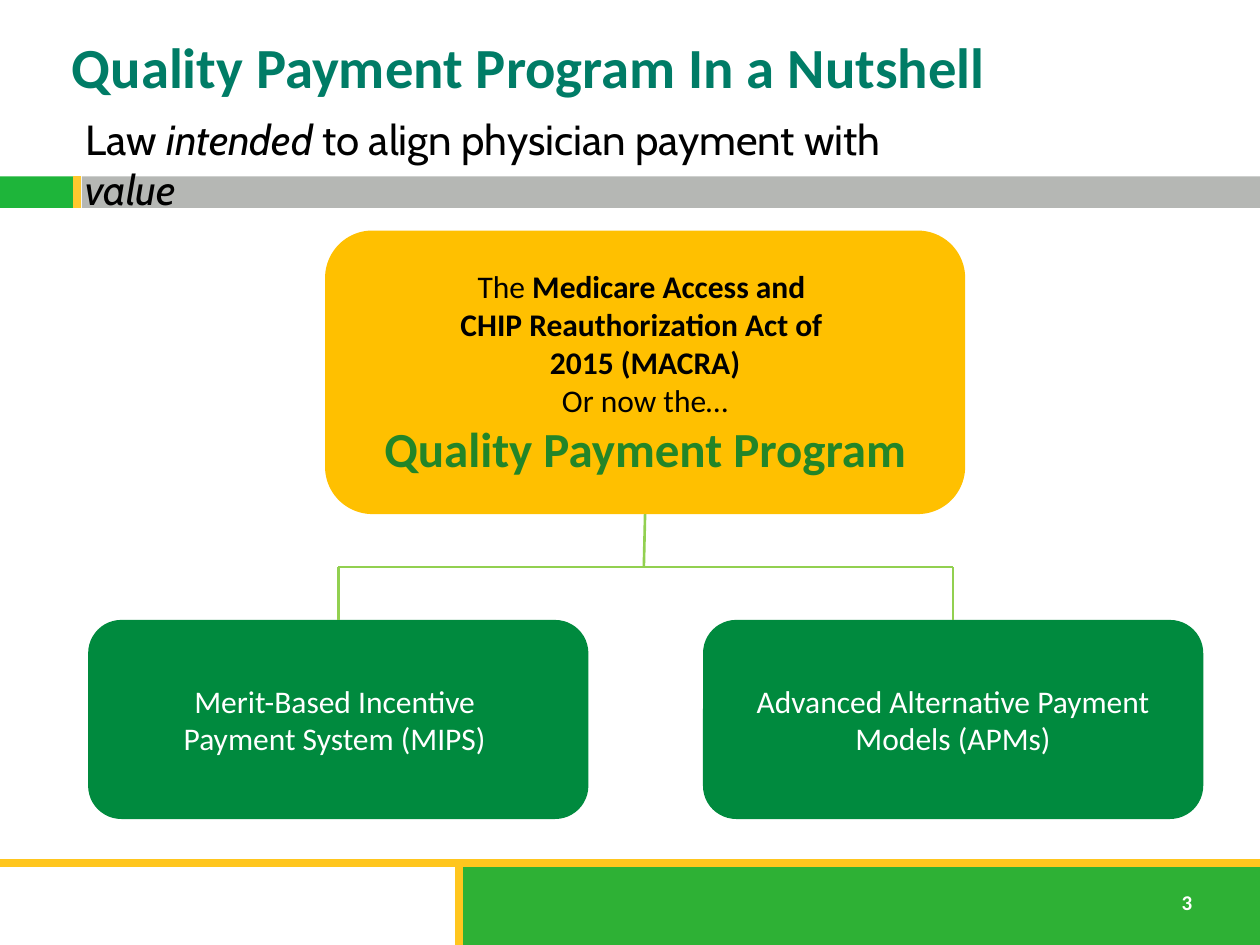
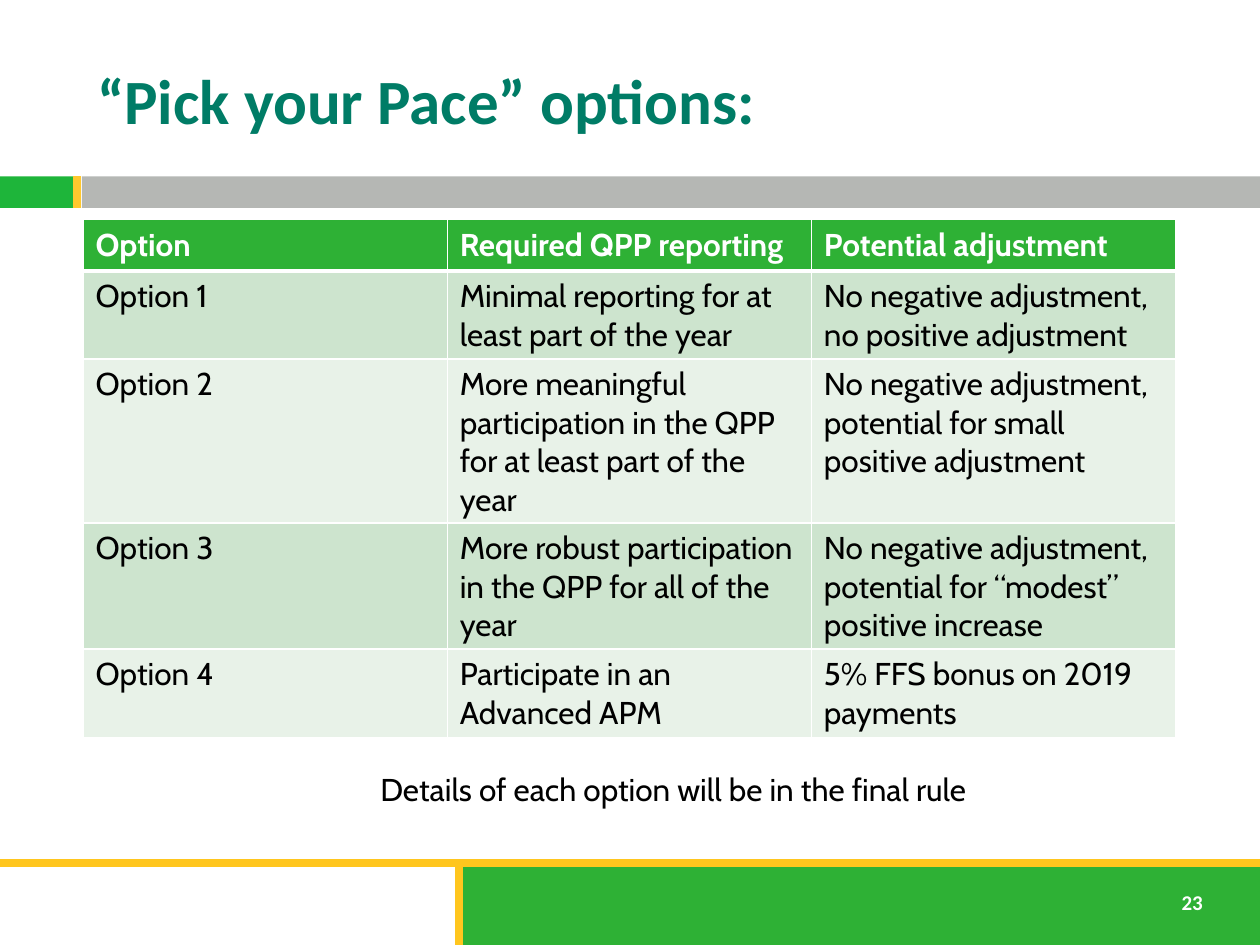
from dataclasses import dataclass

from lxml import etree
from pptx import Presentation
from pptx.dml.color import RGBColor
from pptx.enum.shapes import MSO_CONNECTOR, MSO_SHAPE
from pptx.enum.text import MSO_ANCHOR, MSO_AUTO_SIZE, PP_ALIGN
from pptx.oxml.ns import qn
from pptx.util import Inches, Pt

RECTANGLE = MSO_SHAPE.RECTANGLE
ROUNDED = MSO_SHAPE.ROUNDED_RECTANGLE
STRAIGHT = MSO_CONNECTOR.STRAIGHT
LEFT, CENTER = PP_ALIGN.LEFT, PP_ALIGN.CENTER
TOP, MIDDLE = MSO_ANCHOR.TOP, MSO_ANCHOR.MIDDLE
NO_FIT = MSO_AUTO_SIZE.NONE
TOP_SITE, BOTTOM_SITE = 0, 2
TITLE_ONLY = 5


@dataclass(frozen=True)
class Theme:
    heading: str = "Calibri"
    body: str = "Cabin"
    white: str = "FFFFFF"
    black: str = "000000"
    teal: str = "007C66"
    gold: str = "FFC000"
    dark_green: str = "008A3E"
    program_green: str = "238528"
    branch_green: str = "92D050"
    band_green: str = "1EB53A"
    band_grey: str = "B5B7B4"
    band_yellow: str = "FFC82E"
    footer_green: str = "2EB135"
    footer_yellow: str = "FFC61E"
    row_tints: tuple = ("CDE4CE", "E8F2E8")
    text_size: float = 18
    number_size: float = 12
    subtitle_size: float = 24
    program_size: float = 28
    nutshell_title_size: float = 32.4
    pace_title_size: float = 36
    band_line: float = 4.5
    branch_line: float = 1.5
    cell_line: float = 1
    header_line: float = 3


def set_values(target, values):
    for name, value in values.items():
        setattr(target, name, value)


class Builder:
    def __init__(self, deck, theme):
        self.deck = deck
        self.theme = theme
        self.layout = deck.slide_layouts[TITLE_ONLY]
        self.page = None

    def add_page(self, number):
        first = self.page is None
        self.page = self.deck.slides.add_slide(self.layout)
        if first:
            self.move_bands_to_layout()
        style = {"name": self.theme.heading, "size": self.theme.number_size,
                 "bold": True, "color": self.theme.white}
        self.text((9.28, 7.01, 0.4, 0.3), [[(str(number), {})]], style, wrap=False)

    def move_bands_to_layout(self):
        theme = self.theme
        bands = [self.shape(RECTANGLE, area, color) for area, color in (
            ((0, 1.35, 10, 0.35), theme.white),
            ((0, 1.4, 0.58, 0.25), theme.band_green),
            ((0.65, 1.4, 9.35, 0.25), theme.band_grey),
            ((0.01, 6.81, 9.99, 0.66), theme.white),
            ((3.62, 6.84, 6.38, 0.66), theme.footer_green),
        )]
        bands += [self.line(start, end, color, theme.band_line) for start, end, color in (
            ((0, 6.85), (10, 6.85), theme.footer_yellow),
            ((3.64, 6.86), (3.64, 7.5), theme.footer_yellow),
            ((0.61, 1.4), (0.61, 1.65), theme.band_yellow),
        )]
        for number, band in enumerate(bands, start=100):
            band.element.xpath(".//p:cNvPr")[0].set("id", str(number))
            self.layout.shapes.element.append(band.element)

    def format_span(self, span, style):
        values = dict(style)
        span.font.color.rgb = RGBColor.from_string(values.pop("color"))
        values["size"] = Pt(values["size"])
        set_values(span.font, values)

    def fill_text(self, frame, paragraphs, style, align=LEFT):
        for index, spans in enumerate(paragraphs):
            para = frame.add_paragraph() if index else frame.paragraphs[0]
            para.alignment = align
            for words, changes in spans:
                for position, row in enumerate(words.split("\n")):
                    if position:
                        para.add_line_break()
                    span = para.add_run()
                    span.text = row
                    self.format_span(span, {**style, **changes})

    def title(self, words, area, size):
        box = self.page.shapes.title
        set_values(box, dict(zip(("left", "top", "width", "height"), map(Inches, area))))
        set_values(box.text_frame, {"auto_size": NO_FIT, "vertical_anchor": MIDDLE,
                                    "word_wrap": True})
        style = {"name": self.theme.heading, "size": size, "bold": True,
                 "color": self.theme.teal}
        self.fill_text(box.text_frame, [[(words, {})]], style)

    def text(self, area, paragraphs, style, wrap=True):
        box = self.page.shapes.add_textbox(*map(Inches, area))
        set_values(box.text_frame, {"word_wrap": wrap, "vertical_anchor": TOP})
        self.fill_text(box.text_frame, paragraphs, style)

    def shape(self, kind, area, color):
        box = self.page.shapes.add_shape(kind, *map(Inches, area))
        box.shadow.inherit = False
        box.fill.solid()
        box.fill.fore_color.rgb = RGBColor.from_string(color)
        box.line.fill.background()
        return box

    def card(self, area, color, paragraphs, text_color):
        box = self.shape(ROUNDED, area, color)
        set_values(box.text_frame, {"word_wrap": True, "vertical_anchor": MIDDLE})
        style = {"name": self.theme.heading, "size": self.theme.text_size,
                 "color": text_color}
        self.fill_text(box.text_frame, paragraphs, style, CENTER)
        return box

    def line(self, start, end, color, width):
        connector = self.page.shapes.add_connector(STRAIGHT, *map(Inches, start + end))
        connector.line.color.rgb = RGBColor.from_string(color)
        connector.line.width = Pt(width)
        etree.SubElement(connector.element.spPr, qn("a:effectLst"))
        return connector

    def borders(self, cell, bottom):
        properties = cell._tc.get_or_add_tcPr()
        edge = self.theme.cell_line
        widths = {"a:lnL": edge, "a:lnR": edge, "a:lnT": edge, "a:lnB": bottom}
        for position, (tag, width) in enumerate(widths.items()):
            border = etree.Element(qn(tag), w=str(Pt(width)))
            fill = etree.SubElement(border, qn("a:solidFill"))
            etree.SubElement(fill, qn("a:srgbClr"), val=self.theme.white)
            properties.insert(position, border)

    def table(self, corner, column_width, row_height, rows):
        theme = self.theme
        count, columns = len(rows), len(rows[0])
        size = (column_width * columns, row_height * count)
        grid = self.page.shapes.add_table(count, columns, *map(Inches, corner + size)).table
        for column in grid.columns:
            column.width = Inches(column_width)
        for index, words in enumerate(rows):
            header = index == 0
            grid.rows[index].height = Inches(row_height)
            color = theme.footer_green if header else theme.row_tints[(index - 1) % 2]
            style = {"name": theme.body, "size": theme.text_size, "bold": header,
                     "color": theme.white if header else theme.black}
            for cell, entry in zip(grid.rows[index].cells, words):
                cell.fill.solid()
                cell.fill.fore_color.rgb = RGBColor.from_string(color)
                self.borders(cell, theme.header_line if header else theme.cell_line)
                self.fill_text(cell.text_frame, [[(entry, {})]], style)


def build_nutshell(builder):
    theme = builder.theme
    builder.add_page(3)
    law = builder.card((2.58, 1.83, 5.08, 2.25), theme.gold, [
        [("The ", {}),
         ("Medicare Access and \nCHIP Reauthorization Act of \n2015 (MACRA)", {"bold": True})],
        [("Or now the…", {})],
        [("Quality Payment Program",
          {"size": theme.program_size, "color": theme.program_green, "bold": True})],
    ], theme.black)
    builder.title("Quality Payment Program In a Nutshell", (0.47, -0.02, 7.5, 1.08),
                  theme.nutshell_title_size)

    branch_y, track_top, track_width, track_height = 4.5, 4.92, 3.97, 1.58
    tracks = ((0.7, "Merit-Based Incentive \nPayment System (MIPS) "),
              (5.58, "Advanced Alternative Payment Models (APMs)"))
    centers = [left + track_width / 2 for left, _ in tracks]
    branch = {"color": theme.branch_green, "width": theme.branch_line}
    stem = builder.line((5.12, 4.08), (5.11, branch_y), **branch)
    stem.begin_connect(law, BOTTOM_SITE)
    for (left, words), center in zip(tracks, centers):
        track = builder.card((left, track_top, track_width, track_height),
                             theme.dark_green, [[(words, {})]], theme.white)
        drop = builder.line((center, branch_y), (center, track_top), **branch)
        drop.end_connect(track, TOP_SITE)
    builder.line((centers[0], branch_y), (centers[1], branch_y), **branch)

    style = {"name": theme.body, "size": theme.subtitle_size, "color": theme.black}
    builder.text((0.58, 0.85, 7.25, 0.5), [[
        ("Law ", {}), ("intended", {"italic": True}),
        (" to align physician payment with ", {}), ("value", {"italic": True}),
    ]], style)


def build_pace_options(builder):
    theme = builder.theme
    builder.add_page(23)
    builder.title("“Pick your Pace” options:", (0.67, 0.25, 8.92, 1.08),
                  theme.pace_title_size)
    builder.table((0.66, 1.74), 2.89, 0.41, (
        ("Option", "Required QPP reporting", "Potential adjustment"),
        ("Option 1", "Minimal reporting for at least part of the year",
         "No negative adjustment, no positive adjustment"),
        ("Option 2", "More meaningful participation in the QPP for at least part of the year",
         "No negative adjustment, potential for small positive adjustment"),
        ("Option 3", "More robust participation in the QPP for all of the year",
         "No negative adjustment, potential for “modest” positive increase"),
        ("Option 4", "Participate in an Advanced APM", "5% FFS bonus on 2019 payments"),
    ))
    style = {"name": theme.body, "size": theme.text_size, "color": theme.black}
    builder.text((2.92, 6.06, 5.16, 0.4),
                 [[("Details of each option will be in the final rule", {})]], style)


def main():
    deck = Presentation()
    deck.slide_width, deck.slide_height = Inches(10), Inches(7.5)
    builder = Builder(deck, Theme())
    build_nutshell(builder)
    build_pace_options(builder)
    deck.save("out.pptx")


if __name__ == "__main__":
    main()
